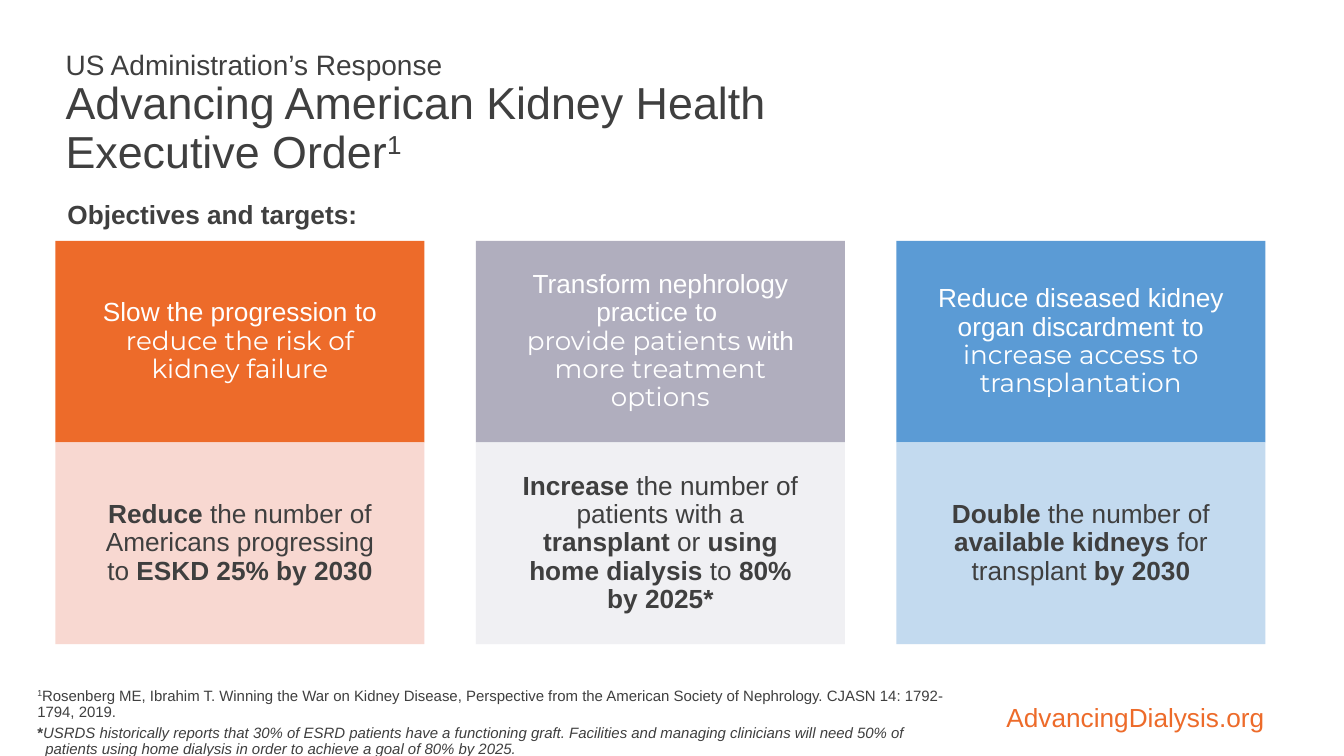
from dataclasses import dataclass
from lxml.etree import SubElement
from pptx import Presentation
from pptx.dml.color import RGBColor
from pptx.enum.shapes import MSO_SHAPE
from pptx.enum.text import MSO_ANCHOR, MSO_AUTO_SIZE, PP_ALIGN
from pptx.oxml.ns import qn
from pptx.util import Pt

SCALE = 9144


@dataclass(frozen=True)
class Theme:
    sans: str = "Arial"
    accent: str = "Montserrat"
    ink: str = "3F3F3F"
    white: str = "FFFFFF"
    orange: str = "ED6B2A"
    blush: str = "F8D4CD"
    mauve: str = "B0AEBE"
    mist: str = "EFEFF2"
    blue: str = "5B9BD5"
    sky: str = "BDD7EE"
    title: float = 32
    kicker: float = 20
    body: float = 18.7
    note: float = 10.7


THEME = Theme()


def px(value):
    return round(value * SCALE)


def place(shape, box):
    shape.left, shape.top, shape.width, shape.height = map(px, box)


def set_frame(shape, inset, anchor=MSO_ANCHOR.TOP):
    frame = shape.text_frame
    frame.word_wrap = True
    frame.auto_size = MSO_AUTO_SIZE.NONE
    frame.vertical_anchor = anchor
    frame.margin_left = frame.margin_right = px(inset[0])
    frame.margin_top = frame.margin_bottom = px(inset[1])
    return frame


def add_box(slide, box, inset, anchor=MSO_ANCHOR.TOP):
    return set_frame(slide.shapes.add_textbox(*map(px, box)), inset, anchor)


def set_para(para, align=PP_ALIGN.LEFT, spacing=0.9):
    para.alignment = align
    para.line_spacing = spacing
    return para


def add_run(para, text, size, color=THEME.ink, style=""):
    run = para.add_run()
    run.text = text
    font = run.font
    font.name = THEME.accent if "m" in style else THEME.sans
    font.size = Pt(size)
    font.bold = "b" in style
    font.italic = "i" in style
    font.color.rgb = RGBColor.from_string(color)
    if "s" in style:
        run._r.get_or_add_rPr().set("baseline", "30000")


def add_title(slide, box):
    shape = slide.shapes.title
    place(shape, box)
    para = set_para(set_frame(shape, (10, 5), MSO_ANCHOR.MIDDLE).paragraphs[0])
    add_run(para, "US Administration’s Response", THEME.kicker)
    para.add_line_break()
    mark = SubElement(para._p[-1], qn("a:rPr"))
    mark.set("sz", str(THEME.kicker * 100))
    add_run(para, "Advancing American Kidney Health Executive Order", THEME.title)
    add_run(para, "1", THEME.title, style="s")


def add_label(slide, box):
    para = set_para(add_box(slide, box, (10, 5)).paragraphs[0], spacing=1)
    add_run(para, "Objectives and targets:", THEME.body, style="b")


def add_panel(slide, box, fill, alpha, color, paras):
    shape = slide.shapes.add_shape(MSO_SHAPE.RECTANGLE, *map(px, box))
    shape.shadow.inherit = False
    shape.fill.solid()
    shape.fill.fore_color.rgb = RGBColor.from_string(fill)
    shape.line.fill.background()
    if alpha < 100:
        tone = shape.fill._xPr.find(".//" + qn("a:srgbClr"))
        SubElement(tone, qn("a:alpha")).set("val", str(alpha * 1000))
    frame = set_frame(shape, (40, 0), MSO_ANCHOR.MIDDLE)
    for index, runs in enumerate(paras):
        para = frame.add_paragraph() if index else frame.paragraphs[0]
        set_para(para, PP_ALIGN.CENTER)
        for text, style in runs:
            add_run(para, text, THEME.body, color, style)


def add_goal(slide, box, tones, aim, target):
    left, top, width, height = box
    half = height // 2
    add_panel(slide, (left, top, width, half), tones[0], 100, THEME.white, aim)
    add_panel(slide, (left, top + half, width, half), tones[1], 90, THEME.ink, [target])


def add_goals(slide, box):
    left, top, width, height = box
    wide = 366
    step = (width - wide) // (len(GOALS) - 1)
    for index, goal in enumerate(GOALS):
        add_goal(slide, (left + index * step, top, wide, height), *goal)


def add_notes(slide, box):
    frame = add_box(slide, box, (7, 4))
    para = set_para(frame.paragraphs[0])
    add_run(para, "1", THEME.note, style="s")
    add_run(para, "Rosenberg ME, Ibrahim T. Winning the War on Kidney Disease, "
            "Perspective from the American Society of Nephrology. "
            "CJASN 14: 1792-1794, 2019.", THEME.note)
    para = set_para(frame.add_paragraph())
    para.space_before = Pt(3.2)
    props = para._p.get_or_add_pPr()
    props.set("marL", str(px(8)))
    props.set("indent", str(px(-8)))
    add_run(para, "*", THEME.note, style="b")
    add_run(para, "USRDS historically reports that 30% of ESRD patients have a "
            "functioning graft. Facilities and managing clinicians will need 50% of "
            "patients using home dialysis in order to achieve a goal of 80% by 2025.",
            THEME.note, style="i")


def add_site(slide, box):
    frame = add_box(slide, box, (11, 0), MSO_ANCHOR.BOTTOM)
    para = set_para(frame.paragraphs[0], PP_ALIGN.RIGHT)
    add_run(para, "AdvancingDialysis.org", THEME.body, THEME.orange)


GOALS = [
    ((THEME.orange, THEME.blush),
     [[("Slow the progression to ", ""), ("reduce the risk of kidney failure", "m")]],
     [("Reduce ", "b"), ("the number of Americans progressing to ", ""),
      ("ESKD 25% by 2030", "b")]),
    ((THEME.mauve, THEME.mist),
     [[("Transform nephrology practice to ", "")],
      [("provide patients ", "m"), ("with ", ""), ("more treatment options", "m")]],
     [("Increase ", "b"), ("the number of patients with a ", ""), ("transplant", "b"),
      (" or ", ""), ("using home dialysis", "b"), (" to ", ""), ("80% by 2025*", "b")]),
    ((THEME.blue, THEME.sky),
     [[("Reduce diseased kidney organ discardment to ", ""),
       ("increase access to transplantation", "m")]],
     [("Double", "b"), (" the number of ", ""), ("available kidneys ", "b"),
      ("for transplant ", ""), ("by 2030", "b")]),
]


def main():
    deck = Presentation()
    deck.slide_width, deck.slide_height = px(1333), px(750)
    slide = deck.slides.add_slide(deck.slide_layouts[5])
    add_title(slide, (55, 82, 901, 63))
    add_label(slide, (57, 192, 491, 42))
    add_goals(slide, (55, 239, 1200, 400))
    add_notes(slide, (30, 679, 926, 71))
    add_site(slide, (812, 666, 453, 61))
    deck.save("out.pptx")


if __name__ == "__main__":
    main()
